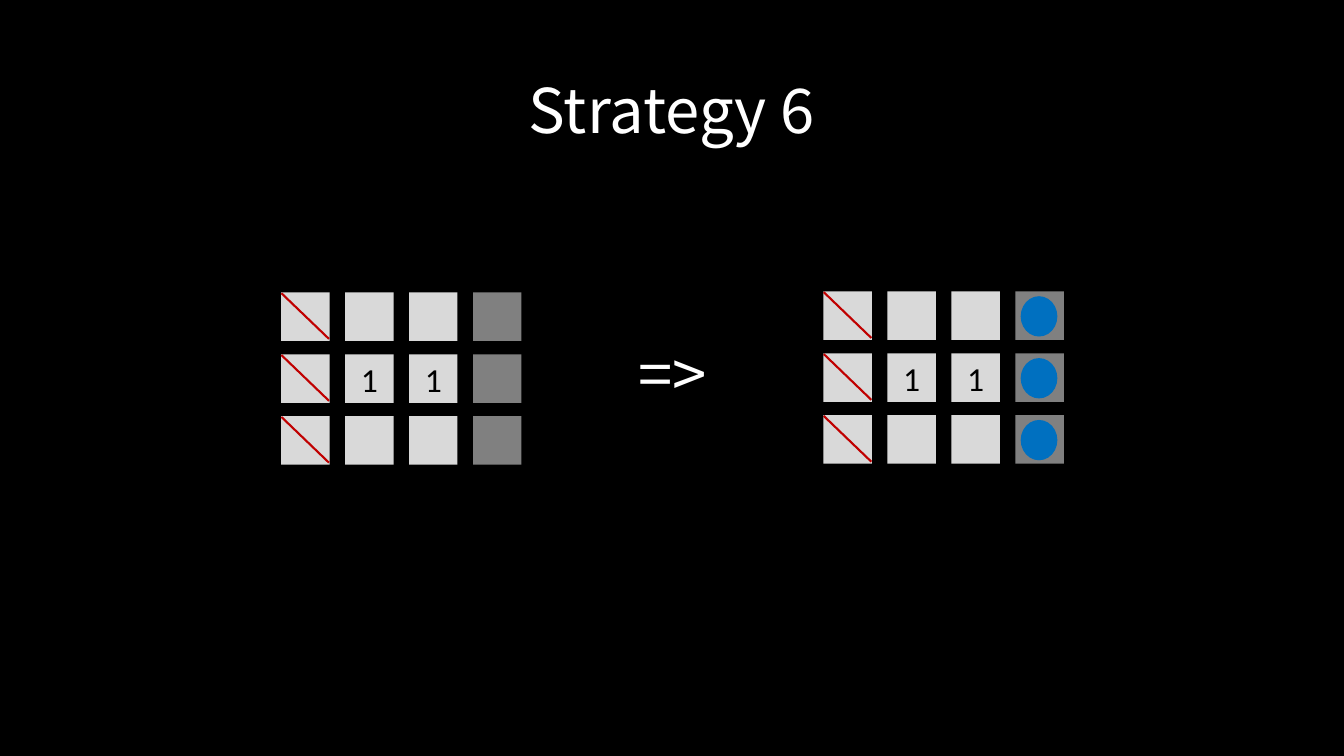
from pptx import Presentation
from pptx.dml.color import RGBColor
from pptx.enum import shapes, text
from pptx.oxml import xmlchemy
from pptx.util import Pt

BLACK = RGBColor(0x00, 0x00, 0x00)
WHITE = RGBColor(0xFF, 0xFF, 0xFF)
OPEN_CELL = RGBColor(0xD9, 0xD9, 0xD9)
HIDDEN_CELL = RGBColor(0x80, 0x80, 0x80)
RED = RGBColor(0xC0, 0x00, 0x00)
BLUE = RGBColor(0x00, 0x70, 0xC0)

ROWS, COLUMNS = 3, 4
CELL = 34.6
STEP_X, STEP_Y = 45.7, 44.2
HEADING = {"name": "Noto Sans CJK KR", "size": Pt(44), "color": WHITE}
DIGIT = {"name": "Calibri", "size": Pt(24), "color": BLACK}


class StrategySlide:
    """Draws the boards and headings of one strategy slide."""

    def __init__(self, presentation):
        self.slide = presentation.slides.add_slide(presentation.slide_layouts[6])
        background = self.slide.background.fill
        background.solid()
        background.fore_color.rgb = BLACK

    def label(self, shape, words, style, spacing=1.0):
        frame = shape.text_frame
        frame.word_wrap = True
        frame.vertical_anchor = text.MSO_ANCHOR.MIDDLE
        paragraph = frame.paragraphs[0]
        paragraph.alignment = text.PP_ALIGN.CENTER
        paragraph.line_spacing = spacing
        run = paragraph.add_run()
        run.text = words
        for name, value in style.items():
            if name == "color":
                run.font.color.rgb = value
            else:
                setattr(run.font, name, value)

    def heading(self, words, left, top, width, height):
        box = self.slide.shapes.add_textbox(Pt(left), Pt(top), Pt(width), Pt(height))
        self.label(box, words, HEADING, 0.9)

    def block(self, parent, kind, left, top, width, height, color):
        shape = parent.add_shape(kind, Pt(left), Pt(top), Pt(width), Pt(height))
        shape.shadow.inherit = False
        shape.fill.solid()
        shape.fill.fore_color.rgb = color
        shape.line.fill.background()
        return shape

    def strike(self, left, top):
        line = self.slide.shapes.add_connector(
            shapes.MSO_CONNECTOR.STRAIGHT,
            Pt(left + 34.2), Pt(top + 33.2), Pt(left + 0.2), Pt(top + 0.5))
        line.line.color.rgb = RED
        line.line.width = Pt(1.5)
        properties = line._element.spPr
        properties.append(xmlchemy.OxmlElement("a:effectLst"))

    def board(self, left, top, marked):
        group = self.slide.shapes.add_group_shape()
        for row in range(ROWS):
            y = top + row * STEP_Y
            for column in range(COLUMNS):
                color = HIDDEN_CELL if column == COLUMNS - 1 else OPEN_CELL
                cell = self.block(group.shapes, shapes.MSO_SHAPE.RECTANGLE,
                                  left + column * STEP_X, y, CELL, CELL, color)
                if row == 1 and column in (1, 2):
                    self.label(cell, "1", DIGIT)
        for row in range(ROWS):
            y = top + row * STEP_Y
            self.strike(left, y)
            if marked:
                self.block(self.slide.shapes, shapes.MSO_SHAPE.OVAL,
                           left + (COLUMNS - 1) * STEP_X + 3.8, y + 3.4, 26.2, 28.8, BLUE)


def main():
    presentation = Presentation()
    presentation.slide_width, presentation.slide_height = Pt(960), Pt(540)
    strategy = StrategySlide(presentation)
    strategy.heading("Strategy 6", 66, 28.75, 828, 104.4)
    strategy.heading("=>", 429.6, 217.5, 101.5, 104.4)
    strategy.board(200.8, 208.9, marked=False)
    strategy.board(588.2, 208.2, marked=True)
    presentation.save("out.pptx")


if __name__ == "__main__":
    main()
